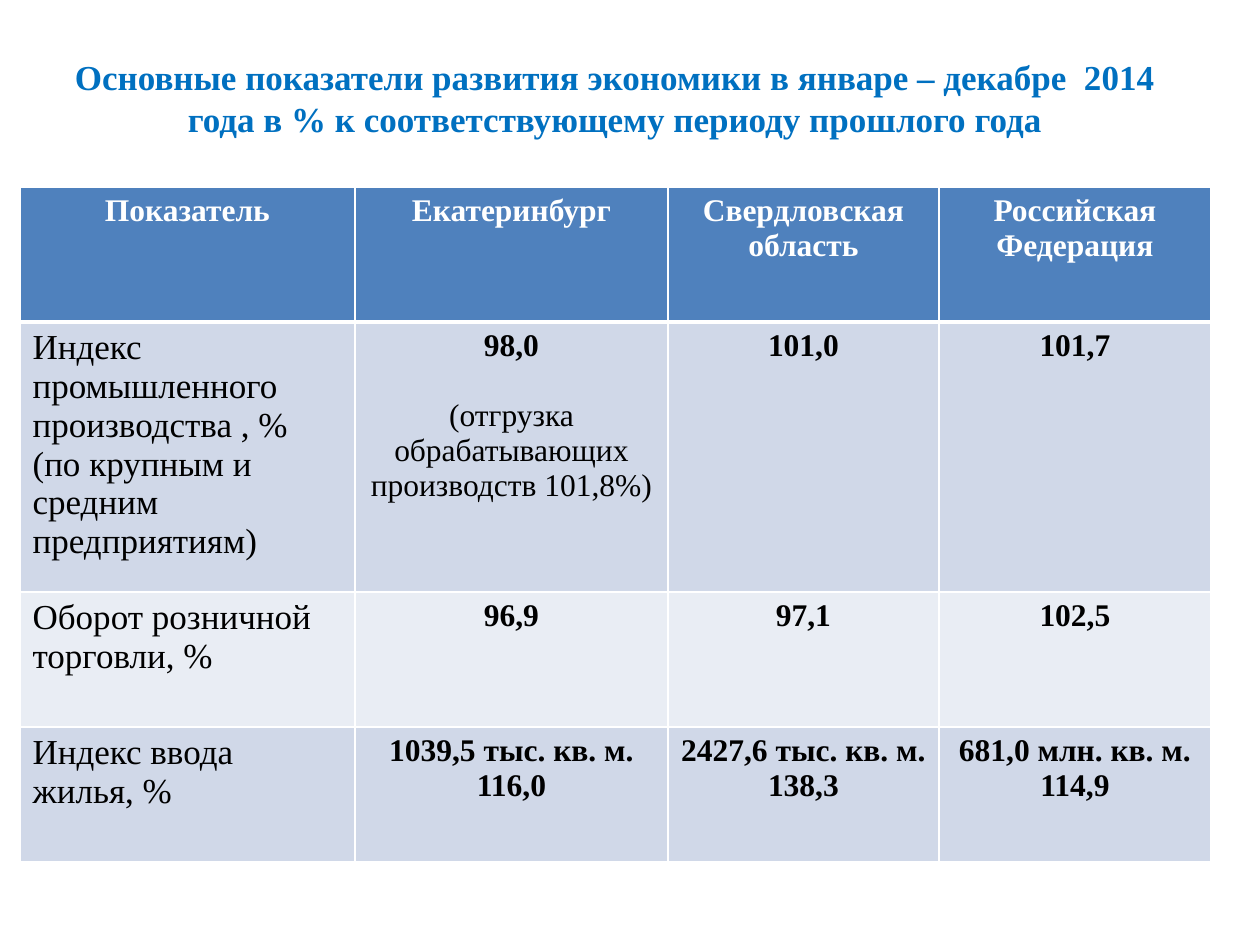
from dataclasses import dataclass

from lxml import etree
from pptx import Presentation
from pptx.dml.color import RGBColor
from pptx.enum.text import MSO_ANCHOR, PP_ALIGN
from pptx.oxml.ns import qn
from pptx.util import Pt

LEFT, CENTER = PP_ALIGN.LEFT, PP_ALIGN.CENTER
TOP, MIDDLE = MSO_ANCHOR.TOP, MSO_ANCHOR.MIDDLE
EMU_PER_PX = 914400 / 126


@dataclass(frozen=True)
class Theme:
    font: str = "Times New Roman"
    title: str = "0070C0"
    header: str = "4F81BD"
    bands: tuple = ("D0D8E8", "E9EDF4")
    white: str = "FFFFFF"
    black: str = "000000"
    large: int = 20
    normal: int = 18
    gap: int = 20
    thin: int = 1
    thick: int = 3


THEME = Theme()
TITLE_STYLE = {"size": THEME.large, "bold": True, "color": THEME.title}
HEADER_STYLE = {"size": THEME.normal, "bold": True, "color": THEME.white}
LABEL_STYLE = {"size": THEME.large, "bold": False, "color": THEME.black}
VALUE_STYLE = {"size": THEME.normal, "bold": True, "color": THEME.black}
NOTE_STYLE = {**VALUE_STYLE, "bold": False}

TITLE = ("Основные показатели развития экономики в январе – декабре  2014 "
         "года в % к соответствующему периоду прошлого года")
HEADERS = ["Показатель", "Екатеринбург", "Свердловская область",
           "Российская Федерация"]
# Each row: label, then the paragraphs of each value cell
INDICATORS = [
    ("Индекс промышленного производства , %\n(по крупным и средним предприятиям)",
     ["98,0"], ["101,0"], ["101,7"]),
    ("Оборот розничной торговли, %", ["96,9"], ["97,1"], ["102,5"]),
    ("Индекс ввода жилья, %", ["1039,5 тыс. кв. м.", "116,0"],
     ["2427,6 тыс. кв. м.", "138,3"], ["681,0 млн. кв. м.", "114,9"]),
]
SHIPMENT_NOTE = "(отгрузка обрабатывающих производств 101,8%)"
COLUMN_WIDTHS = [335, 313, 271, 272]
ROW_HEIGHTS = [135, 270, 135, 135]


def px(length):
    return round(length * EMU_PER_PX)


def write_para(para, text, style, align):
    para.alignment = align
    for index, line in enumerate(text.split("\n")):
        if index:
            para.add_line_break()
        span = para.add_run()
        span.text = line
        values = {"name": THEME.font, "size": Pt(style["size"]),
                  "bold": style["bold"]}
        for name, value in values.items():
            setattr(span.font, name, value)
        span.font.color.rgb = RGBColor.from_string(style["color"])


def write_paras(frame, texts, style, align):
    for index, text in enumerate(texts):
        para = frame.add_paragraph() if index else frame.paragraphs[0]
        write_para(para, text, style, align)


def set_borders(cell, row):
    """Draw white cell borders, with a thick rule under the header row."""
    widths = {"a:lnL": THEME.thin, "a:lnR": THEME.thin,
              "a:lnT": THEME.thick if row == 1 else THEME.thin,
              "a:lnB": THEME.thick if row == 0 else THEME.thin}
    properties = cell._tc.get_or_add_tcPr()
    for position, (tag, width) in enumerate(widths.items()):
        line = etree.Element(qn(tag), w=str(Pt(width)))
        fill = etree.SubElement(line, qn("a:solidFill"))
        etree.SubElement(fill, qn("a:srgbClr"), val=THEME.white)
        properties.insert(position, line)


def add_title(page, box):
    frame = page.shapes.add_textbox(*map(px, box)).text_frame
    frame.word_wrap = True
    frame.vertical_anchor = MIDDLE
    write_paras(frame, [TITLE], TITLE_STYLE, CENTER)


def add_indicator_table(page, box):
    table = page.shapes.add_table(
        len(ROW_HEIGHTS), len(COLUMN_WIDTHS), *map(px, box)).table
    for column, width in zip(table.columns, COLUMN_WIDTHS):
        column.width = px(width)
    for table_row, height in zip(table.rows, ROW_HEIGHTS):
        table_row.height = px(height)

    # Header row
    for column, text in enumerate(HEADERS):
        write_paras(table.cell(0, column).text_frame, [text], HEADER_STYLE, CENTER)

    # Indicator rows
    for row, (label, *values) in enumerate(INDICATORS, start=1):
        write_paras(table.cell(row, 0).text_frame, [label], LABEL_STYLE, LEFT)
        for column, texts in enumerate(values, start=1):
            write_paras(table.cell(row, column).text_frame, texts,
                        VALUE_STYLE, CENTER)

    # Note under the first city value
    note = table.cell(1, 1).text_frame.add_paragraph()
    note.space_before = Pt(THEME.gap)
    write_para(note, SHIPMENT_NOTE, NOTE_STYLE, CENTER)

    # Fills and borders
    for row in range(len(ROW_HEIGHTS)):
        color = THEME.bands[(row - 1) % 2] if row else THEME.header
        for cell in table.rows[row].cells:
            cell.vertical_anchor = TOP
            cell.fill.solid()
            cell.fill.fore_color.rgb = RGBColor.from_string(color)
            set_borders(cell, row)


def main():
    deck = Presentation()
    deck.slide_width, deck.slide_height = px(1260), px(945)
    page = deck.slides.add_slide(deck.slide_layouts[6])
    add_title(page, (35, 37, 1160, 121))
    add_indicator_table(page, (20, 187, sum(COLUMN_WIDTHS), sum(ROW_HEIGHTS)))
    deck.save("out.pptx")


if __name__ == "__main__":
    main()
